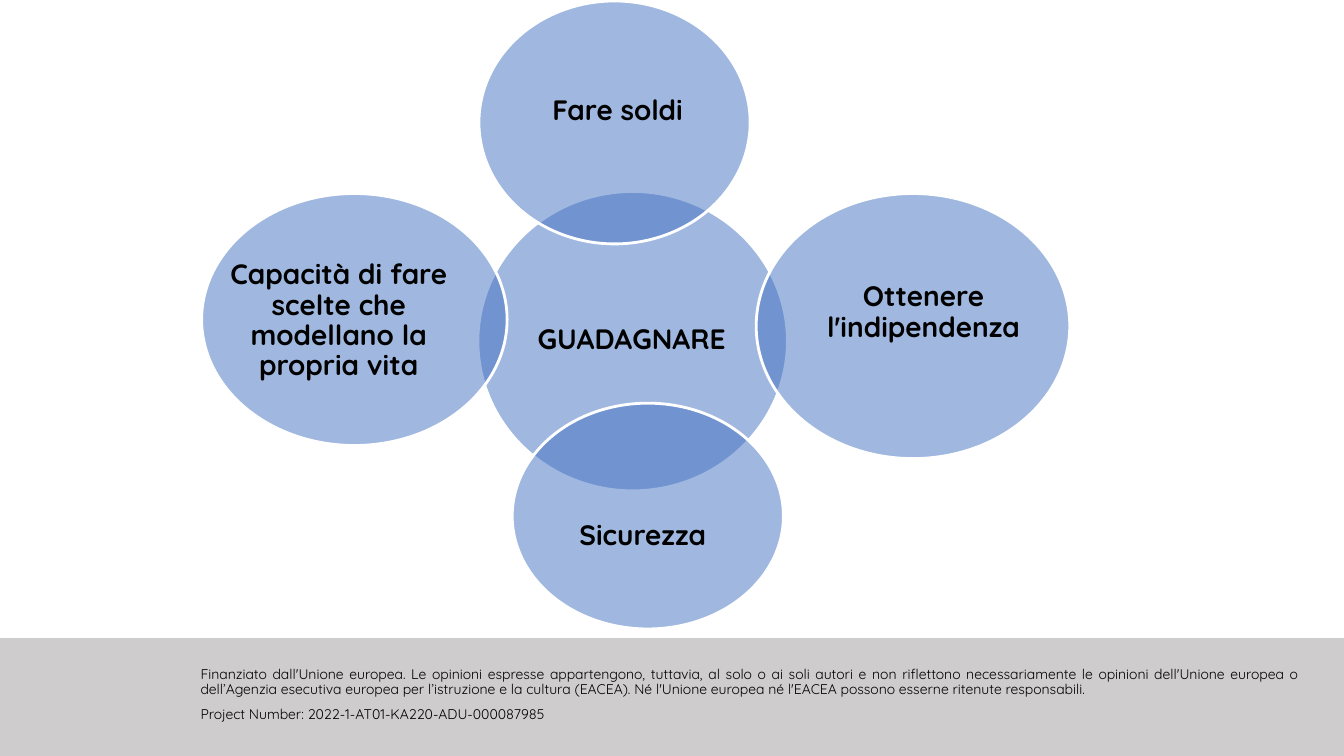
from lxml import etree
from pptx import Presentation
from pptx.dml.color import RGBColor
from pptx.enum import shapes, text
from pptx.oxml import ns
from pptx.util import Inches, Pt

FONT = "Quicksand"
BLACK, WHITE, BLUE, GREY = "000000", "FFFFFF", "4372C3", "AEABAB"

# label, circle (left, top, width, height), label area (left, top, width, height)
CIRCLES = [
    ("GUADAGNARE", (4.74, 1.9, 3.07, 2.97), (5.18, 2.33, 2.17, 2.1)),
    ("Fare soldi", (4.75, 0.01, 2.69, 2.41), (5.17, 0.25, 1.91, 1.71)),
    ("Ottenere l'indipendenza", (7.5, 1.92, 3.11, 2.63), (8.08, 2.25, 2.16, 1.71)),
    ("Sicurezza", (5.08, 4, 2.69, 2.24), (5.42, 4.47, 1.91, 1.71)),
    ("Capacità di fare scelte che modellano la propria vita",
     (2, 1.92, 3.03, 2.5), (2.25, 2.33, 2.22, 1.71)),
]
FOOTER_BAND = (0, 6.33, 13.33, 1.17)
FOOTER_AREA = (1.89, 6.57, 11.08, 0.82)
FOOTER = [
    "Finanziato dall'Unione europea. Le opinioni espresse appartengono, tuttavia, "
    "al solo o ai soli autori e non riflettono necessariamente le opinioni "
    "dell'Unione europea o dell’Agenzia esecutiva europea per l’istruzione e la "
    "cultura (EACEA). Né l'Unione europea né l'EACEA possono esserne ritenute "
    "responsabili.",
    "Project Number: 2022-1-AT01-KA220-ADU-000087985",
]

LABEL_FRAME = {"vertical_anchor": text.MSO_ANCHOR.MIDDLE,
               **{f"margin_{side}": Inches(0.02)
                  for side in ("left", "top", "right", "bottom")}}
LABEL_PARAGRAPH = {"alignment": text.PP_ALIGN.CENTER, "line_spacing": 0.9}
LABEL_FONT = {"size": Pt(20), "bold": True}
FOOTER_PARAGRAPHS = [
    {"alignment": text.PP_ALIGN.JUSTIFY, "line_spacing": 0.9, "space_after": Pt(6)},
    {"alignment": text.PP_ALIGN.JUSTIFY},
]
FOOTER_FONT = {"size": Pt(10)}


def color(value):
    return RGBColor.from_string(value)


def apply(target, values):
    for name, value in values.items():
        setattr(target, name, value)


def inches(box):
    return [Inches(value) for value in box]


def add_translucent(slide, preset, box, fill, opacity):
    shape = slide.shapes.add_shape(preset, *inches(box))
    shape.shadow.inherit = False
    shape.fill.solid()
    shape.fill.fore_color.rgb = color(fill)
    tint = shape.fill._xPr.find(".//" + ns.qn("a:srgbClr"))
    etree.SubElement(tint, ns.qn("a:alpha"), val=str(opacity * 1000))
    return shape


def add_text(slide, box, lines, frame_format, paragraph_formats, font_format):
    frame = slide.shapes.add_textbox(*inches(box)).text_frame
    apply(frame, {"word_wrap": True, **frame_format})
    frame.text = "\n".join(lines)
    for paragraph, paragraph_format in zip(frame.paragraphs, paragraph_formats):
        apply(paragraph, paragraph_format)
        font = paragraph.runs[0].font
        apply(font, {"name": FONT, **font_format})
        font.color.rgb = color(BLACK)


def main():
    deck = Presentation()
    deck.slide_width, deck.slide_height = Inches(13.33), Inches(7.5)
    slide = deck.slides.add_slide(deck.slide_layouts[6])

    band = add_translucent(slide, shapes.MSO_SHAPE.RECTANGLE, FOOTER_BAND, GREY, 60)
    band.line.fill.background()
    add_text(slide, FOOTER_AREA, FOOTER, {}, FOOTER_PARAGRAPHS, FOOTER_FONT)

    for label, circle_box, label_box in CIRCLES:
        circle = add_translucent(slide, shapes.MSO_SHAPE.OVAL, circle_box, BLUE, 50)
        circle.line.color.rgb = color(WHITE)
        circle.line.width = Pt(2)
        add_text(slide, label_box, [label], LABEL_FRAME, [LABEL_PARAGRAPH], LABEL_FONT)

    deck.save("out.pptx")


if __name__ == "__main__":
    main()
